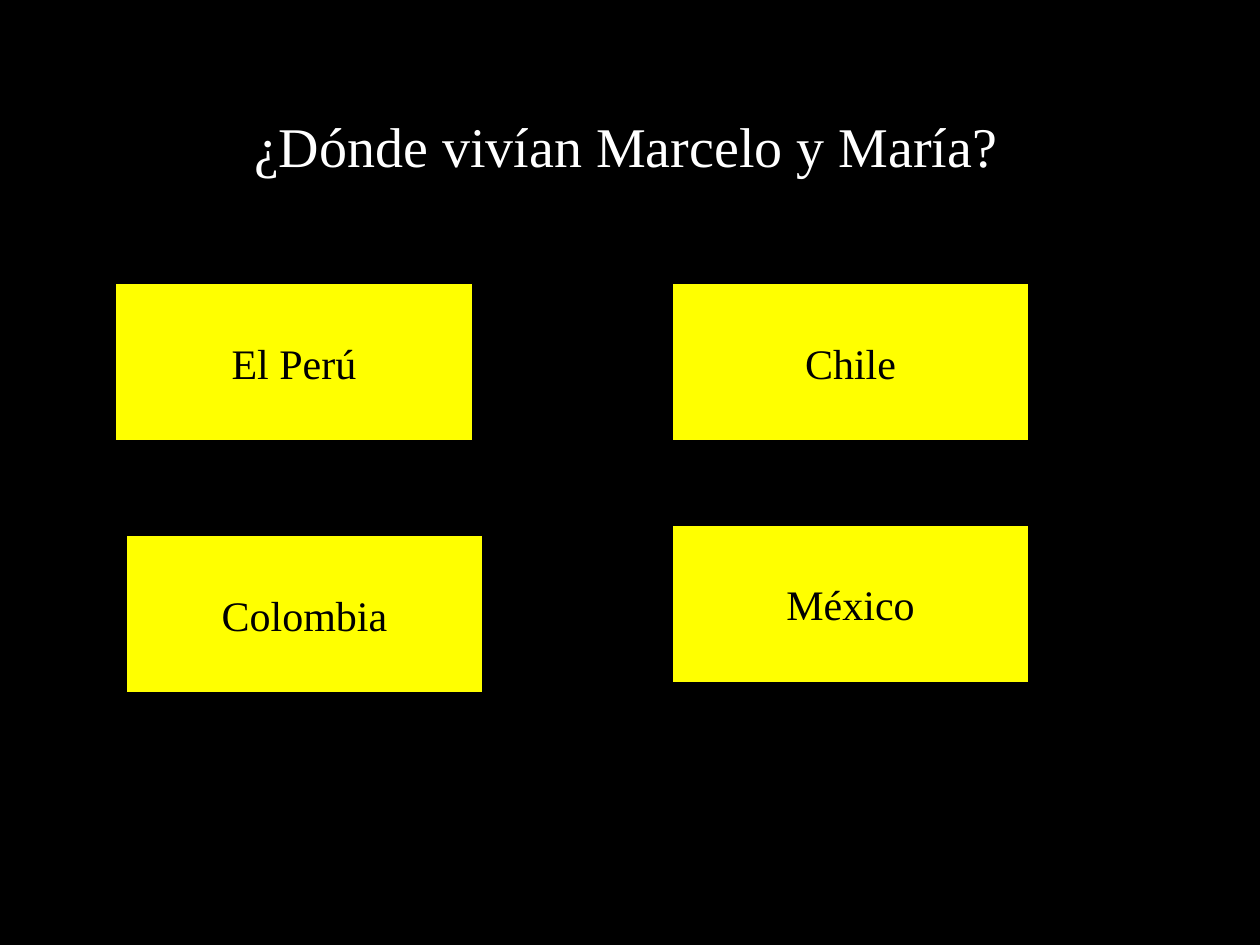
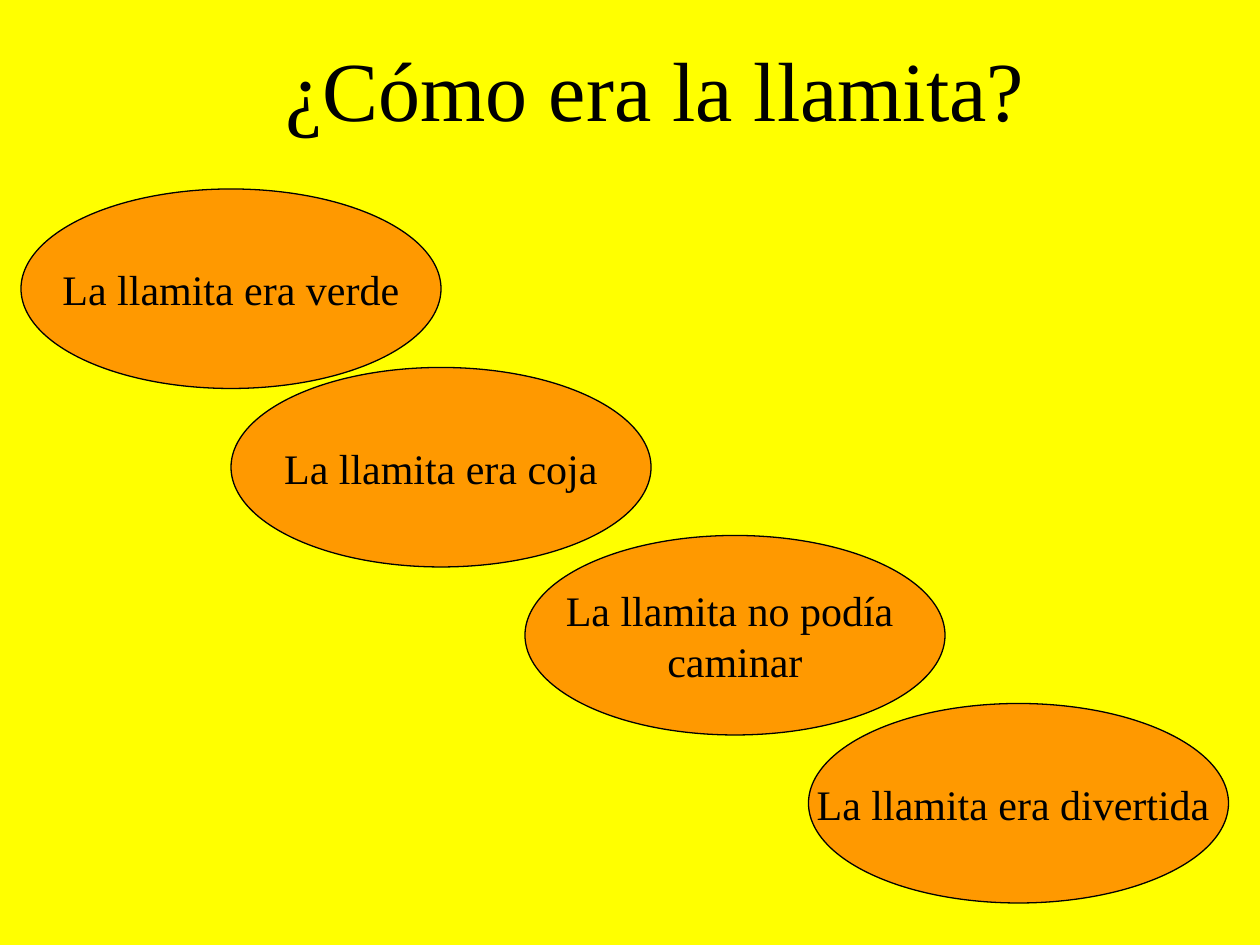
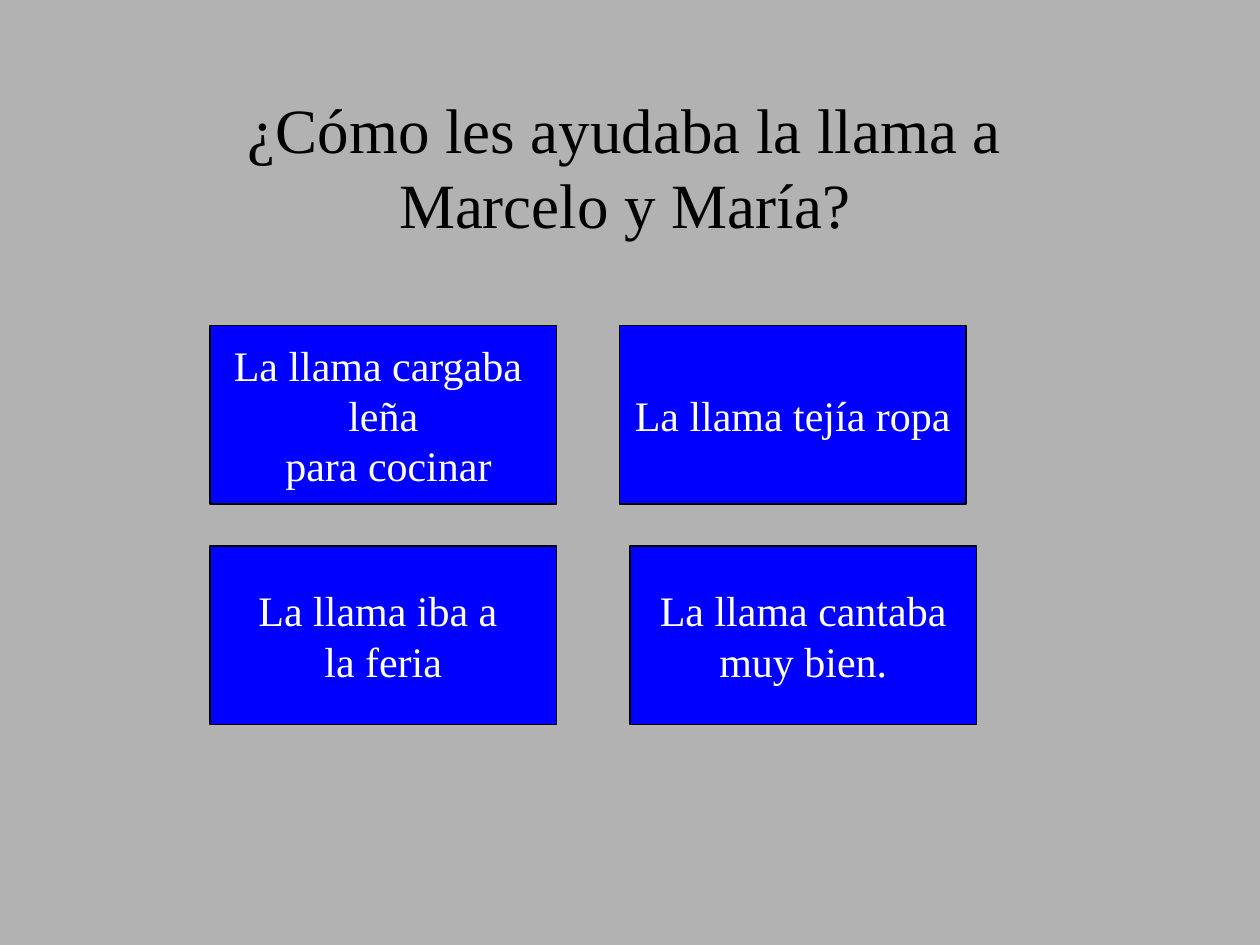
from dataclasses import dataclass

from pptx import Presentation
from pptx.dml.color import RGBColor
from pptx.enum.shapes import MSO_SHAPE as Preset
from pptx.enum.text import MSO_ANCHOR as Anchor, MSO_AUTO_SIZE as AutoSize, PP_ALIGN as Align
from pptx.util import Inches, Pt

COLUMNS, ROWS = 120, 90
CELL = Inches(10) // COLUMNS
TITLE_ONLY = 5
FONT = "Times New Roman"
BLACK, WHITE, YELLOW = "000000", "FFFFFF", "FFFF00"
ORANGE, BLUE, GRAY = "FF9900", "0000FF", "B2B2B2"


@dataclass(frozen=True)
class Area:
    """A block of grid cells."""
    column: float
    row: float
    width: float
    height: float


@dataclass(frozen=True)
class Question:
    text: str
    area: Area
    size: int
    color: str = BLACK
    align: Align = Align.LEFT


@dataclass(frozen=True)
class Answer:
    text: str
    column: int
    row: int


@dataclass(frozen=True)
class AnswerStyle:
    preset: Preset
    width: int
    height: int
    fill: str
    color: str = BLACK


@dataclass(frozen=True)
class Quiz:
    background: str
    question: Question
    style: AnswerStyle
    answers: tuple[Answer, ...]


QUIZZES = (
    Quiz(
        BLACK,
        Question("¿Dónde vivían Marcelo y María?", Area(23, 10, 74, 7.6), 32, WHITE),
        AnswerStyle(Preset.RECTANGLE, 34, 15, YELLOW),
        (
            Answer("El Perú", 11, 27),
            Answer("Chile", 64, 27),
            Answer("Colombia", 12, 51),
            Answer("México", 64, 50),
        ),
    ),
    Quiz(
        YELLOW,
        Question("¿Cómo era la llamita?", Area(26, 3, 77, 10.8), 48),
        AnswerStyle(Preset.OVAL, 40, 19, ORANGE),
        (
            Answer("La llamita era verde", 2, 18),
            Answer("La llamita era coja", 22, 35),
            Answer("La llamita no podía \ncaminar", 50, 51),
            Answer("La llamita era divertida ", 77, 67),
        ),
    ),
    Quiz(
        GRAY,
        Question("¿Cómo les ayudaba la llama a Marcelo y María?",
                 Area(18, 8, 83, 15.6), 36, align=Align.CENTER),
        AnswerStyle(Preset.RECTANGLE, 33, 17, BLUE, WHITE),
        (
            Answer("La llama cargaba \nleña\n para cocinar", 20, 31),
            Answer("La llama tejía ropa", 59, 31),
            Answer("La llama cantaba\nmuy bien.", 60, 52),
            Answer("La llama iba a \nla feria", 20, 52),
        ),
    ),
)


def paint(color_holder, color: str) -> None:
    """Make a fill solid in the given hex colour."""
    color_holder.solid()
    color_holder.fore_color.rgb = RGBColor.from_string(color)


def bounds(area: Area) -> tuple[int, ...]:
    return tuple(round(cells * CELL)
                 for cells in (area.column, area.row, area.width, area.height))


def write(frame, text: str, *, size: int, color: str, align: Align,
          anchor: Anchor, wrap: bool, auto_size: AutoSize = AutoSize.NONE) -> None:
    frame.text = text
    frame.word_wrap = wrap
    frame.auto_size = auto_size
    frame.vertical_anchor = anchor
    for paragraph in frame.paragraphs:
        paragraph.alignment = align
        for run in paragraph.runs:
            run.font.name = FONT
            run.font.size = Pt(size)
            run.font.color.rgb = RGBColor.from_string(color)


def draw_question(slide, question: Question) -> None:
    title = slide.shapes.title
    title.left, title.top, title.width, title.height = bounds(question.area)
    write(title.text_frame, question.text, size=question.size, color=question.color,
          align=question.align, anchor=Anchor.TOP, wrap=True,
          auto_size=AutoSize.SHAPE_TO_FIT_TEXT)


def draw_answer(slide, answer: Answer, style: AnswerStyle) -> None:
    area = Area(answer.column, answer.row, style.width, style.height)
    option = slide.shapes.add_shape(style.preset, *bounds(area))
    option.shadow.inherit = False
    paint(option.fill, style.fill)
    paint(option.line.fill, BLACK)
    option.line.width = Pt(0.75)
    write(option.text_frame, answer.text, size=24, color=style.color,
          align=Align.CENTER, anchor=Anchor.MIDDLE, wrap=False)


def main() -> None:
    deck = Presentation()
    deck.slide_width, deck.slide_height = COLUMNS * CELL, ROWS * CELL
    for quiz in QUIZZES:
        slide = deck.slides.add_slide(deck.slide_layouts[TITLE_ONLY])
        paint(slide.background.fill, quiz.background)
        draw_question(slide, quiz.question)
        for answer in quiz.answers:
            draw_answer(slide, answer, quiz.style)
    deck.save("out.pptx")


if __name__ == "__main__":
    main()
